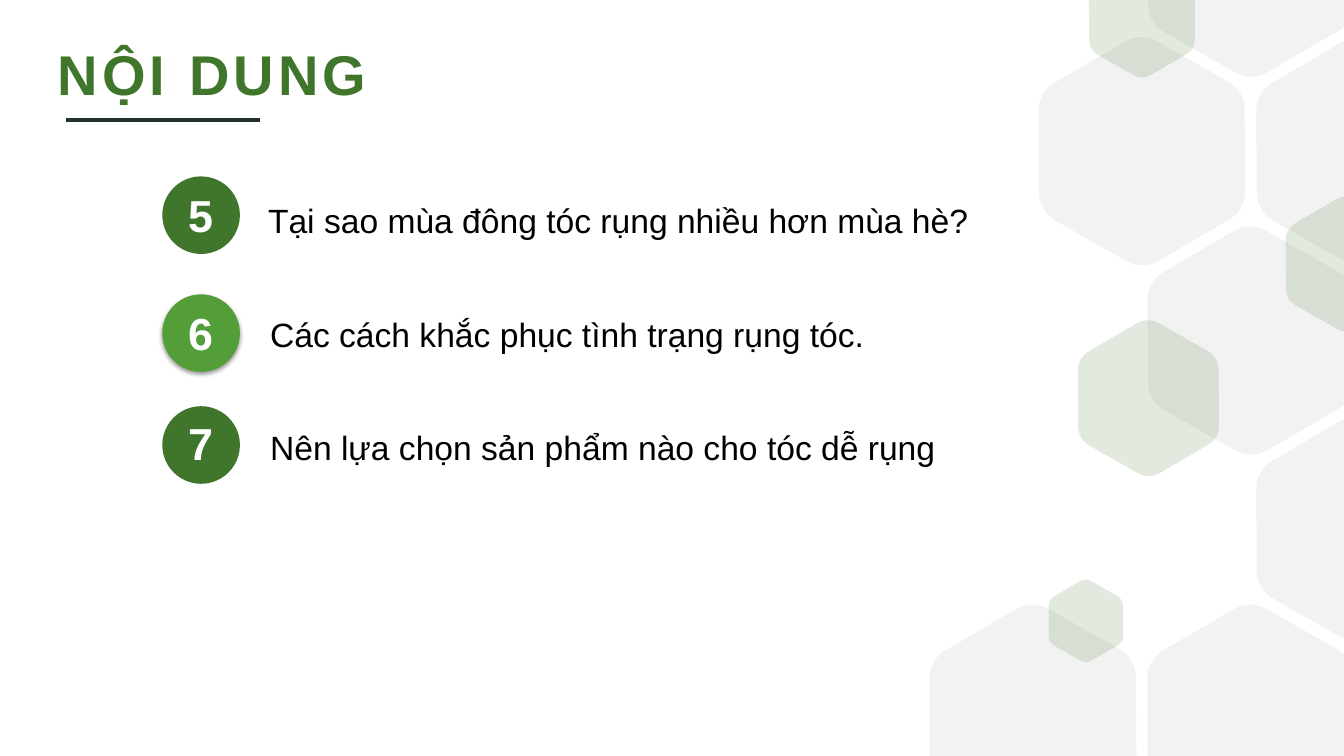
from dataclasses import dataclass
from math import cos, pi, sin

from lxml import etree
from pptx import Presentation
from pptx.dml.color import RGBColor
from pptx.enum.shapes import MSO_CONNECTOR, MSO_SHAPE
from pptx.enum.text import MSO_ANCHOR, MSO_AUTO_SIZE, PP_ALIGN
from pptx.oxml.ns import qn
from pptx.shapes.autoshape import Shape
from pptx.slide import Slide
from pptx.util import Pt

ELLIPSE = MSO_SHAPE.OVAL
STRAIGHT = MSO_CONNECTOR.STRAIGHT
LEFT = PP_ALIGN.LEFT
TOP = MSO_ANCHOR.TOP
GROW = MSO_AUTO_SIZE.SHAPE_TO_FIT_TEXT

PX = 9144
SLIDE_WIDTH, SLIDE_HEIGHT = 1333, 750
FONT = "Arial"
COLOURS = {
    "dark green": "3F762B",
    "green": "549E39",
    "grey": "F2F2F2",
    "rule": "223028",
    "white": "FFFFFF",
    "black": "000000",
}
CORNER = ((1, 0.39), (1, 0.51), (0.94, 0.61), (0.83, 0.67))
HEIGHT_RATIO = 1.1
GREY_WIDTH = 205
GREY_CELLS = ((0, 4), (2, 4), (3, 1), (2, 0), (2, 2), (1, 1), (3, 3))
BADGE_SIZE = 77

Point = tuple[float, float]


@dataclass(frozen=True)
class Hexagon:
    left: int
    middle: int
    width: int
    colour: str
    opacity: int = 100


@dataclass(frozen=True)
class Topic:
    number: str
    wording: str
    badge_top: int
    number_top: int
    wording_left: int
    wording_top: int
    colour: str = "dark green"
    raised: bool = False


HEXAGONS = [
    Hexagon(922 + 108 * column, -37 + 375 * row // 2, GREY_WIDTH, "grey")
    for column, row in GREY_CELLS
] + [
    Hexagon(left, middle, width, "dark green", 15)
    for left, middle, width in (
        (1275, 262, 122), (1040, 616, 74), (1080, 19, 105), (1069, 395, 140))
]
TOPICS = [
    Topic("5", "Tại sao mùa đông tóc rụng nhiều hơn mùa hè?", 175, 181, 256, 193),
    Topic("6", "Các cách khắc phục tình trạng rụng tóc.", 292, 298, 258, 307, "green", True),
    Topic("7", "Nên lựa chọn sản phẩm nào cho tóc dễ rụng", 403, 408, 258, 419),
]


def rgb(colour: str) -> RGBColor:
    return RGBColor.from_string(COLOURS[colour])


def paint(shape: Shape, colour: str) -> None:
    shape.shadow.inherit = False
    shape.fill.solid()
    shape.fill.fore_color.rgb = rgb(colour)
    shape.line.fill.background()


def clamp(y: float) -> float:
    return min(max(y, 0), SLIDE_HEIGHT)


def hexagon_corner(hexagon: Hexagon, side: int) -> list[Point]:
    radius, turn = hexagon.width / 2, side * pi / 3
    return [
        (hexagon.left + radius + radius * (across * cos(turn) - down * sin(turn)),
         hexagon.middle + radius * (across * sin(turn) + down * cos(turn)))
        for across, down in CORNER
    ]


def add_step(outline: etree._Element, tag: str, points: list[Point],
             left: float, top: float) -> None:
    step = etree.SubElement(outline, qn(tag))
    for x, y in points:
        etree.SubElement(step, qn("a:pt"), x=str(round((x - left) * PX)),
                         y=str(round((y - top) * PX)))


def draw_hexagon(slide: Slide, hexagon: Hexagon) -> None:
    left, right = hexagon.left, hexagon.left + hexagon.width
    half_height = hexagon.width * HEIGHT_RATIO / 2
    top, bottom = clamp(hexagon.middle - half_height), clamp(hexagon.middle + half_height)
    builder = slide.shapes.build_freeform(left * PX, round(top * PX))
    builder.add_line_segments(
        [(x * PX, round(y * PX)) for x, y in ((right, top), (right, bottom), (left, bottom))])
    cell = builder.convert_to_shape()
    paint(cell, hexagon.colour)

    outline = next(cell._element.iter(qn("a:path")))
    for step in list(outline):
        outline.remove(step)
    for side in range(6):
        corner = hexagon_corner(hexagon, side)
        visible = all(0 <= y <= SLIDE_HEIGHT for _, y in corner)
        tag = "a:lnTo" if len(outline) else "a:moveTo"
        if visible:
            add_step(outline, tag, corner[:1], left, top)
            add_step(outline, "a:cubicBezTo", corner[1:], left, top)
        elif side % 3 != 1:
            edge = (left if side in (2, 3) else right, clamp(corner[1][1]))
            add_step(outline, tag, [edge], left, top)
    etree.SubElement(outline, qn("a:close"))

    if hexagon.opacity < 100:
        colour = cell._element.spPr.find(f"{qn('a:solidFill')}/{qn('a:srgbClr')}")
        etree.SubElement(colour, qn("a:alpha"), val=str(hexagon.opacity * 1000))


def write(box: Shape, text: str, *, left: int, top: int, width: int, height: int,
          size: int, colour: str, bold: bool = False, spacing: int = 0) -> None:
    box.left, box.top, box.width, box.height = (n * PX for n in (left, top, width, height))
    frame = box.text_frame
    frame.word_wrap = True
    frame.auto_size = GROW
    frame.vertical_anchor = TOP
    paragraph = frame.paragraphs[0]
    paragraph.alignment = LEFT
    run = paragraph.add_run()
    run.text = text
    run.font.name = FONT
    run.font.size = Pt(size)
    run.font.bold = bold
    run.font.color.rgb = rgb(colour)
    if spacing:
        run.font._element.set("spc", str(spacing * 100))


def add_drop_shadow(badge: Shape) -> None:
    effects = badge._element.spPr.find(qn("a:effectLst"))
    shadow = etree.SubElement(
        effects, qn("a:outerShdw"), blurRad=str(Pt(3.1)), dist=str(Pt(1.6)),
        dir="5400000", rotWithShape="0")
    colour = etree.SubElement(shadow, qn("a:srgbClr"), val=COLOURS["black"])
    etree.SubElement(colour, qn("a:alpha"), val="38000")


def draw_topic(slide: Slide, topic: Topic) -> None:
    badge = slide.shapes.add_shape(
        ELLIPSE, 161 * PX, topic.badge_top * PX, BADGE_SIZE * PX, BADGE_SIZE * PX)
    paint(badge, topic.colour)
    if topic.raised:
        add_drop_shadow(badge)
    write(slide.shapes.add_textbox(0, 0, 0, 0), topic.number, left=177,
          top=topic.number_top, width=55, height=64, size=32, colour="white", bold=True)
    write(slide.shapes.add_textbox(0, 0, 0, 0), topic.wording, left=topic.wording_left,
          top=topic.wording_top, width=879, height=50, size=24, colour="black")


def draw_title(slide: Slide) -> None:
    write(slide.shapes.title, "NỘI DUNG", left=47, top=34, width=863, height=77,
          size=40, colour="dark green", bold=True, spacing=3)
    rule = slide.shapes.add_connector(STRAIGHT, 65 * PX, 119 * PX, 258 * PX, 119 * PX)
    rule.line.color.rgb = rgb("rule")
    rule.line.width = Pt(3)
    etree.SubElement(rule._element.spPr, qn("a:effectLst"))


def main() -> None:
    deck = Presentation()
    deck.slide_width, deck.slide_height = SLIDE_WIDTH * PX, SLIDE_HEIGHT * PX
    slide = deck.slides.add_slide(deck.slide_layouts[5])
    for hexagon in HEXAGONS:
        draw_hexagon(slide, hexagon)
    draw_title(slide)
    for topic in TOPICS:
        draw_topic(slide, topic)
    deck.save("out.pptx")


if __name__ == "__main__":
    main()
